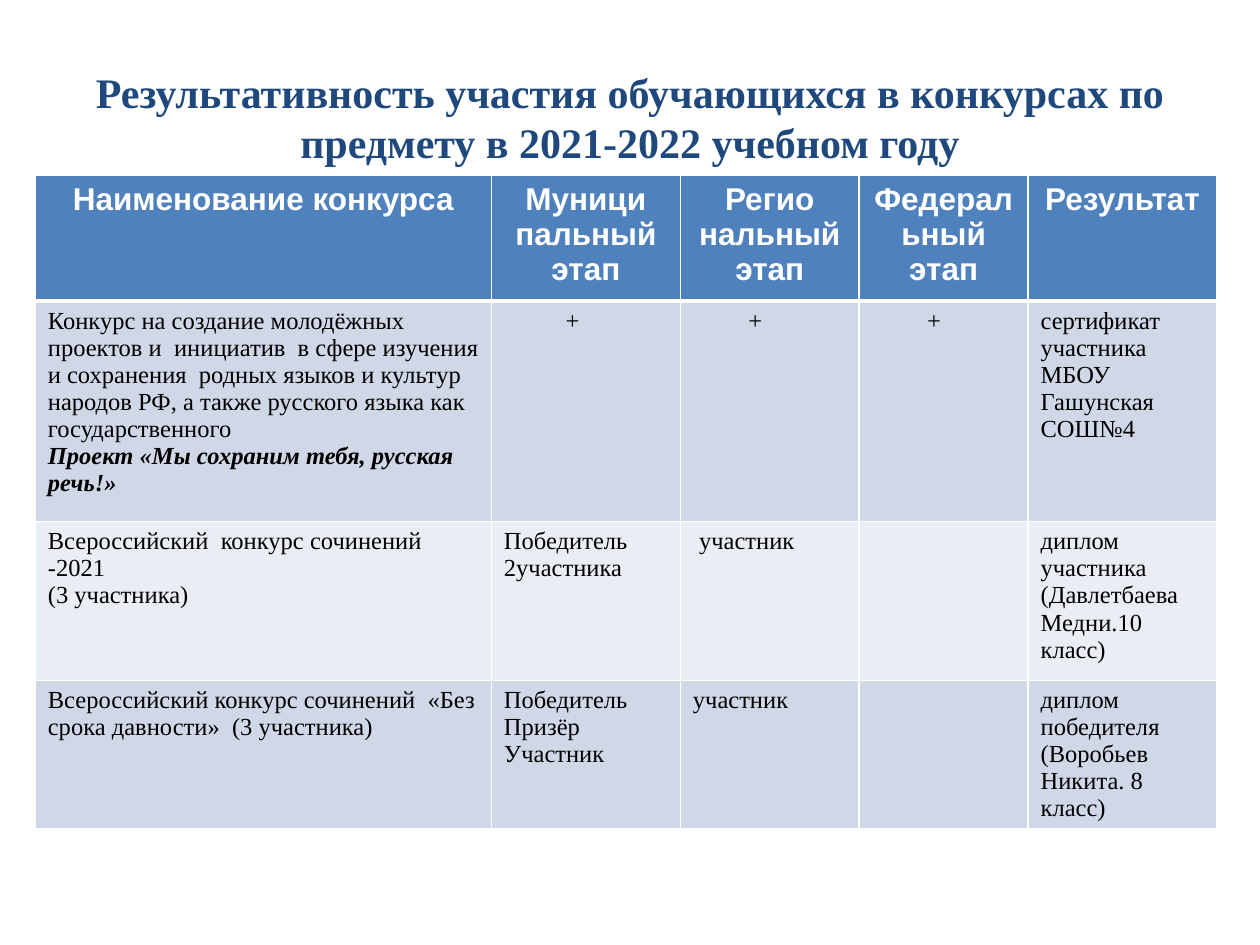
from pptx import Presentation
from pptx.dml.color import RGBColor
from pptx.enum.text import MSO_ANCHOR, PP_ALIGN
from pptx.oxml import parse_xml
from pptx.oxml.ns import nsdecls
from pptx.util import Inches, Pt
from dataclasses import dataclass

# Content: each cell is a list of paragraphs
TITLE = "Результативность участия обучающихся в конкурсах по предмету в 2021-2022 учебном году"
HEAD = [
    ["Наименование конкурса"],
    ["Муници", "пальный этап"],
    ["Регио", "нальный этап"],
    ["Федеральный этап"],
    ["Результат"],
]
BODY = [
    [["Конкурс на создание молодёжных проектов и  инициатив  в сфере изучения "
      "и сохранения  родных языков и культур народов РФ, а также русского языка "
      "как государственного",
      "Проект «Мы сохраним тебя, русская речь!»"],
     ["+"], ["+"], ["+"],
     ["сертификат участника", "МБОУ Гашунская СОШ№4"]],
    [["Всероссийский  конкурс сочинений -2021", "(3 участника)"],
     ["Победитель", "2участника"], [" участник"], [],
     ["диплом участника", "(Давлетбаева Медни.10 класс)"]],
    [["Всероссийский конкурс сочинений  «Без срока давности»  (3 участника)"],
     ["Победитель", "Призёр", "Участник"], ["участник"], [],
     ["диплом победителя", "(Воробьев Никита. 8 класс)"]],
]
COLS = [3.62, 1.5, 1.42, 1.34, 1.5]
ROWS = [1, 1.75, 1.26, 1.03]
INDENT = {1: 0.49, 2: 0.44, 3: 0.44}  # inset of the plus marks by column


@dataclass
class Theme:
    serif: str = "Times New Roman"
    sans: str = "Arial"
    title: str = "1F497D"
    head: str = "4F81BD"
    bands: tuple = ("D0D8E8", "E9EDF4")
    light: str = "FFFFFF"
    dark: str = "000000"
    big: int = 24
    mid: int = 18
    small: int = 14


T = Theme()


def write(frame, lines, font=T.serif, size=T.small, color=T.dark,
          bold=False, align=PP_ALIGN.LEFT, accent=()):
    """Fill a text frame; lines listed in accent are bold italic."""
    frame.word_wrap = True
    for i, line in enumerate(lines):
        para = frame.paragraphs[0] if i == 0 else frame.add_paragraph()
        para.alignment = align
        run = para.add_run()
        run.text = line
        run.font.name, run.font.size = font, Pt(size)
        run.font.bold = bold or line in accent
        run.font.italic = line in accent
        run.font.color.rgb = RGBColor.from_string(color)


def paint(cell, fill, top=1, base=1):
    """Set a cell's fill and its white borders, widths in points."""
    cell.fill.solid()
    cell.fill.fore_color.rgb = RGBColor.from_string(fill)
    props = cell._tc.get_or_add_tcPr()
    for i, (side, width) in enumerate(zip("LRTB", (1, 1, top, base))):
        props.insert(i, parse_xml(
            f'<a:ln{side} {nsdecls("a")} w="{Pt(width)}"><a:solidFill>'
            f'<a:srgbClr val="{T.light}"/></a:solidFill></a:ln{side}>'))


def main():
    deck = Presentation()
    deck.slide_width, deck.slide_height = Inches(10), Inches(7.5)
    slide = deck.slides.add_slide(deck.slide_layouts[6])

    # Table
    grid = slide.shapes.add_table(
        len(ROWS), len(COLS), Inches(0.28), Inches(1.39),
        Inches(sum(COLS)), Inches(sum(ROWS))).table
    for col, width in zip(grid.columns, COLS):
        col.width = Inches(width)
    for row, height in zip(grid.rows, ROWS):
        row.height = Inches(height)

    # Header row
    for c, lines in enumerate(HEAD):
        cell = grid.cell(0, c)
        paint(cell, T.head, base=3)
        write(cell.text_frame, lines, font=T.sans, size=T.mid,
              color=T.light, bold=True, align=PP_ALIGN.CENTER)

    # Banded body rows
    for r, row in enumerate(BODY):
        for c, lines in enumerate(row):
            cell = grid.cell(r + 1, c)
            paint(cell, T.bands[r % 2], top=1 if r else 3)
            if lines == ["+"]:
                cell.margin_left = Inches(0.1 + INDENT[c])
            write(cell.text_frame, lines, accent=BODY[0][0][1:])

    # Title
    frame = slide.shapes.add_textbox(
        Inches(0.5), Inches(0.3), Inches(9), Inches(1.25)).text_frame
    frame.vertical_anchor = MSO_ANCHOR.MIDDLE
    write(frame, [TITLE], size=T.big, color=T.title, bold=True,
          align=PP_ALIGN.CENTER)

    deck.save("out.pptx")


if __name__ == "__main__":
    main()
